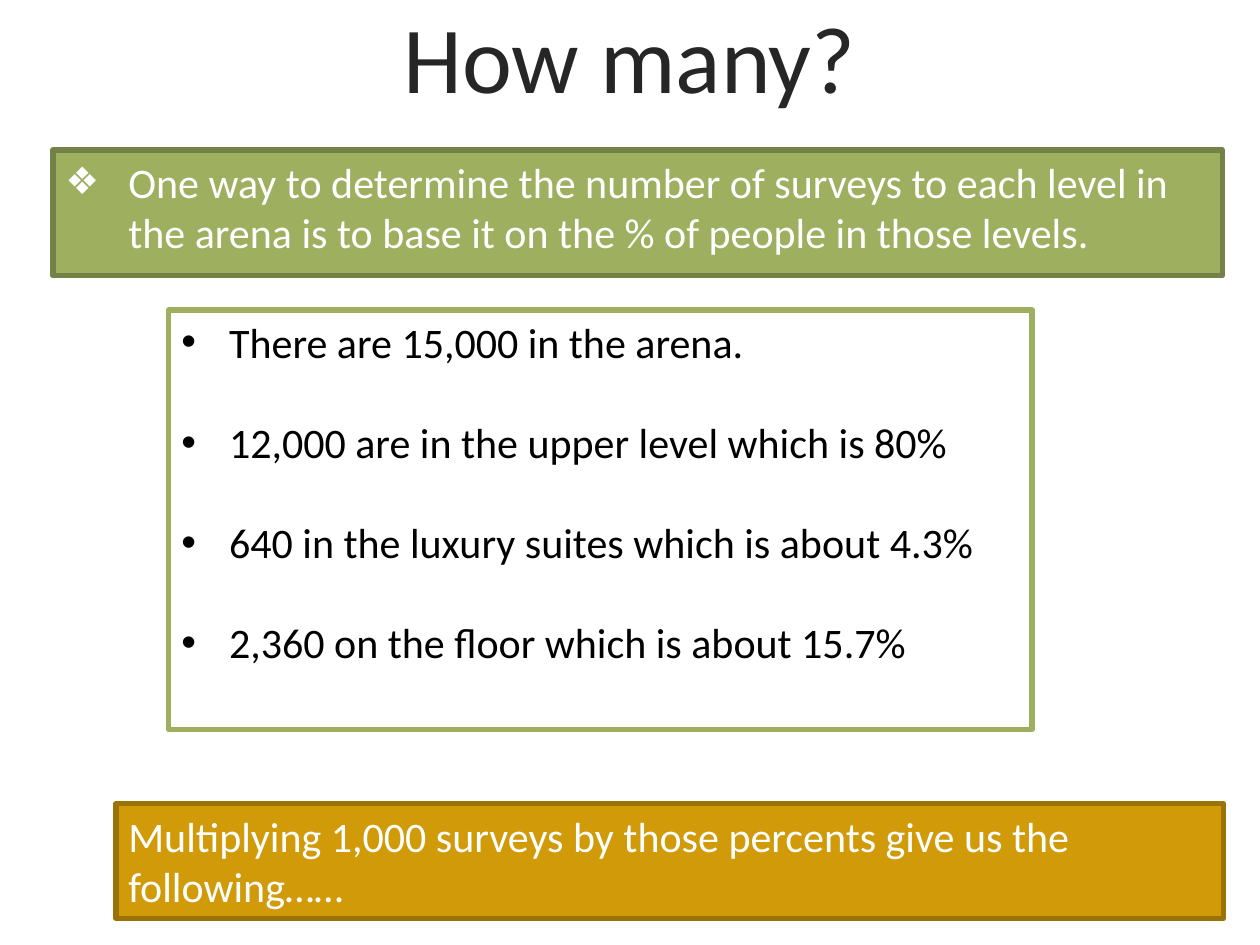
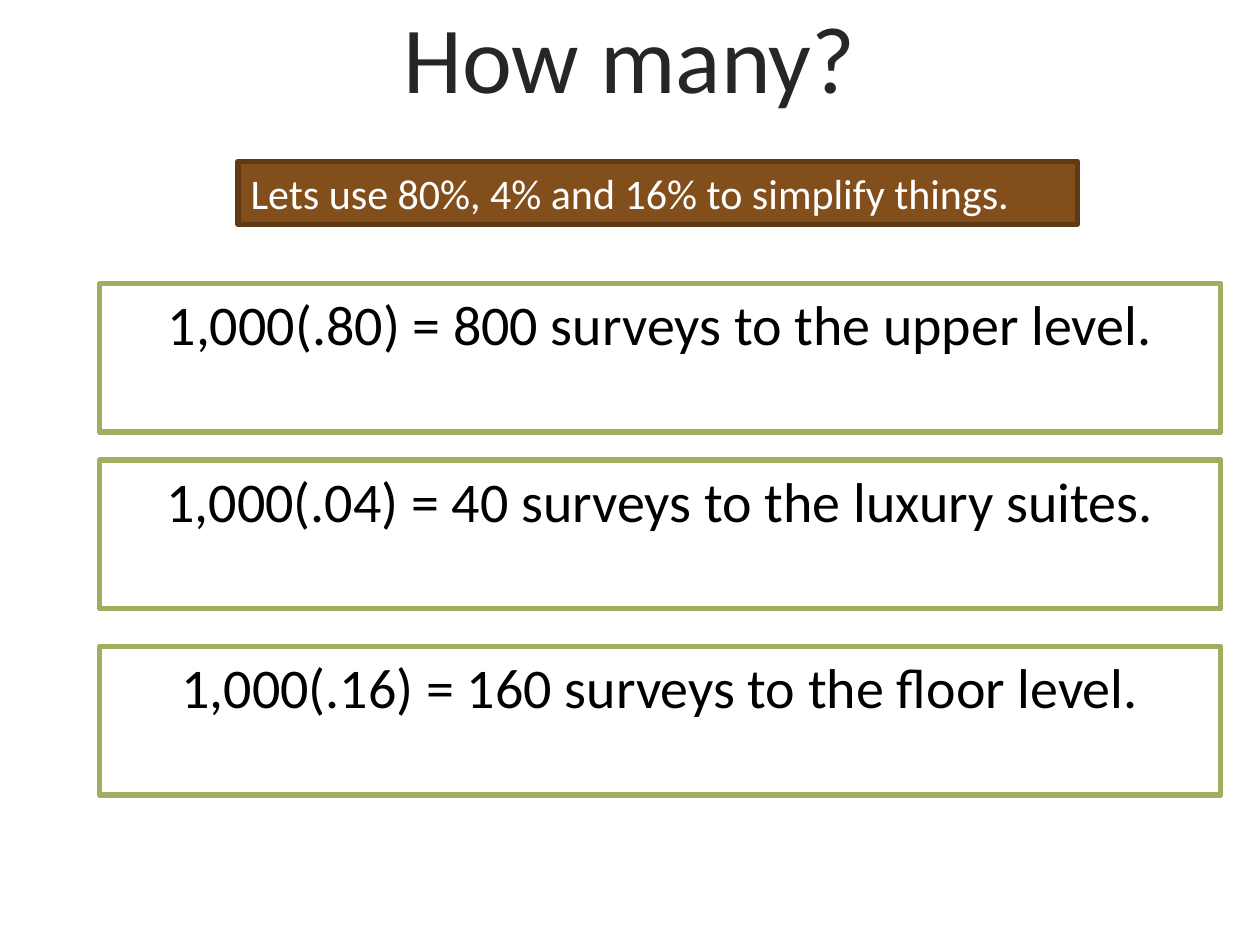
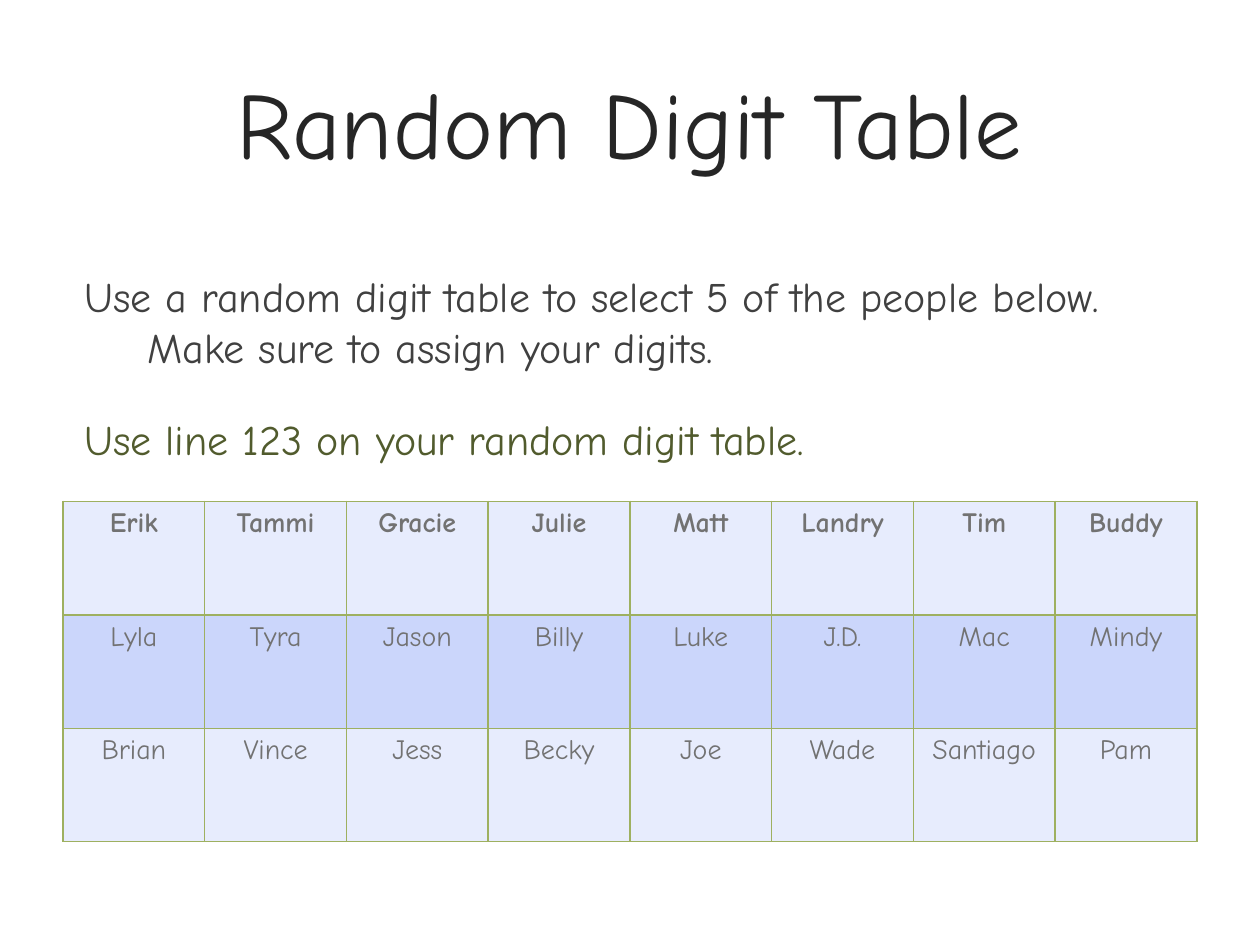
from dataclasses import dataclass

from lxml import etree
from pptx import Presentation
from pptx import util as u
from pptx.dml.color import RGBColor
from pptx.enum import shapes, text
from pptx.oxml.ns import qn

COLUMNS, ROWS = 100, 75
SLIDE_WIDTH, SLIDE_HEIGHT = u.Inches(10), u.Inches(7.5)
LEFT, CENTER = text.PP_ALIGN.LEFT, text.PP_ALIGN.CENTER


@dataclass(frozen=True)
class Theme:
    font: str = "Calibri"
    hand_font: str = "Comic Neue"
    title_size: int = 54
    formula_size: int = 32
    body_size: int = 24
    cell_size: int = 16
    title: str = "262626"
    body: str = "404040"
    hint: str = "515B2D"
    cell_text: str = "727272"
    black: str = "000000"
    white: str = "FFFFFF"
    green: str = "9EB060"
    dark_green: str = "758247"
    gold: str = "D09A08"
    dark_gold: str = "9A7206"
    brown: str = "824F1C"
    dark_brown: str = "603A15"
    light_band: str = "E7ECFD"
    dark_band: str = "CBD6FB"


THEME = Theme()


def place(column, row, width, height):
    """Turn grid columns and rows into left, top, width and height."""
    across, down = SLIDE_WIDTH / COLUMNS, SLIDE_HEIGHT / ROWS
    return [round(length) for length in
            (column * across, row * down, width * across, height * down)]


def add_bullet(paragraph, symbol, percent):
    properties = paragraph._p.get_or_add_pPr()
    etree.SubElement(properties, qn("a:buSzPct"), val=str(percent * 1000))
    etree.SubElement(properties, qn("a:buFont"), typeface="Arial")
    etree.SubElement(properties, qn("a:buChar"), char=symbol)


def write(frame, lines, *, size=THEME.body_size, color=THEME.black, font=THEME.font,
          bold=False, align=LEFT, indent=0, gap=0, bullet=None, bullet_percent=100):
    """Fill a text frame; a line is a string or a (string, colour) pair."""
    frame.word_wrap = True
    for index, line in enumerate(lines):
        words, line_color = (line, color) if isinstance(line, str) else line
        paragraph = frame.add_paragraph() if index else frame.paragraphs[0]
        paragraph.alignment = align
        if index and gap:
            paragraph.space_before = u.Pt(gap)
        if indent:
            properties = paragraph._p.get_or_add_pPr()
            properties.set("marL", str(u.Inches(indent)))
            properties.set("indent", str(-u.Inches(indent)))
        if bullet:
            add_bullet(paragraph, bullet, bullet_percent)
        run = paragraph.add_run()
        run.text = words
        run.font.size, run.font.name, run.font.bold = u.Pt(size), font, bold
        run.font.color.rgb = RGBColor.from_string(line_color)


def add_titled_slide(deck, title, row, height, font=THEME.font):
    slide = deck.slides.add_slide(deck.slide_layouts[5])
    heading = slide.shapes.title
    heading.left, heading.top, heading.width, heading.height = place(7.9, row, 84.1, height)
    heading.text_frame.auto_size = text.MSO_AUTO_SIZE.NONE
    heading.text_frame.vertical_anchor = text.MSO_ANCHOR.MIDDLE
    write(heading.text_frame, [title], size=THEME.title_size, color=THEME.title,
          font=font, align=CENTER)
    return slide


def add_panel(slide, area, lines, fill=THEME.white, edge=THEME.green, **style):
    panel = slide.shapes.add_shape(shapes.MSO_SHAPE.RECTANGLE, *place(*area))
    panel.shadow.inherit = False
    panel.fill.solid()
    panel.fill.fore_color.rgb = RGBColor.from_string(fill)
    panel.line.color.rgb = RGBColor.from_string(edge)
    panel.line.width = u.Pt(3)
    panel.text_frame.vertical_anchor = text.MSO_ANCHOR.TOP
    write(panel.text_frame, lines, **style)


def add_borders(cell, color):
    properties = cell._tc.get_or_add_tcPr()
    for position, side in enumerate(("lnL", "lnR", "lnT", "lnB")):
        border = etree.Element(qn(f"a:{side}"), w=str(u.Pt(1)))
        fill = etree.SubElement(border, qn("a:solidFill"))
        etree.SubElement(fill, qn("a:srgbClr"), val=color)
        properties.insert(position, border)


def add_name_table(slide, area, names):
    table = slide.shapes.add_table(len(names), len(names[0]), *place(*area)).table
    table.first_row = table.horz_banding = False
    for row, row_names in enumerate(names):
        for column, name in enumerate(row_names):
            cell = table.cell(row, column)
            cell.fill.solid()
            band = THEME.dark_band if row % 2 else THEME.light_band
            cell.fill.fore_color.rgb = RGBColor.from_string(band)
            add_borders(cell, THEME.green)
            write(cell.text_frame, [name], size=THEME.cell_size, color=THEME.cell_text,
                  font=THEME.hand_font, bold=row == 0, align=CENTER)


def build_percentages(deck):
    slide = add_titled_slide(deck, "How many?", 0, 8.8)
    add_panel(slide, (4.2, 11.9, 92.8, 10),
              ["One way to determine the number of surveys to each level in "
               "the arena is to base it on the % of people in those levels."],
              THEME.green, THEME.dark_green, color=THEME.white,
              indent=0.5, bullet="❖", bullet_percent=90)
    add_panel(slide, (13.4, 24.6, 68.5, 33.3),
              ["There are 15,000 in the arena.",
               "12,000 are in the upper level which is 80%",
               "640 in the luxury suites which is about 4.3%",
               "2,360 on the floor which is about 15.7%"],
              indent=0.38, bullet="•", gap=28.5)
    add_panel(slide, (9.2, 63.8, 87.9, 9.1),
              ["Multiplying 1,000 surveys by those percents give us the following……"],
              THEME.gold, THEME.dark_gold, color=THEME.white)


def build_survey_counts(deck):
    slide = add_titled_slide(deck, "How many?", 0, 8.8)
    formulas = {22.5: "1,000(.80) = 800 surveys to the upper level.",
                36.5: "1,000(.04) = 40 surveys to the luxury suites.",
                51.3: "1,000(.16) = 160 surveys to the floor level."}
    for row, formula in formulas.items():
        add_panel(slide, (7.9, row, 89, 11.8), [formula],
                  size=THEME.formula_size, align=CENTER)
    add_panel(slide, (18.9, 12.8, 66.6, 5),
              ["Lets use 80%, 4% and 16% to simplify things."],
              THEME.brown, THEME.dark_brown, color=THEME.white)


def build_random_digits(deck):
    slide = add_titled_slide(deck, "Random Digit Table", 3.4, 12.5, THEME.hand_font)
    task = slide.shapes.add_textbox(*place(5.7, 21, 88.5, 18))
    write(task.text_frame,
          ["Use a random digit table to select 5 of the people below. "
           "Make sure to assign your digits.",
           ("Use line 123 on your random digit table.", THEME.hint)],
          color=THEME.body, font=THEME.hand_font, indent=0.5, gap=24)
    add_name_table(slide, (5, 39.8, 90, 27), [
        ["Erik", "Tammi", "Gracie", "Julie", "Matt", "Landry", "Tim", "Buddy"],
        ["Lyla", "Tyra", "Jason", "Billy", "Luke", "J.D.", "Mac", "Mindy"],
        ["Brian", "Vince", "Jess", "Becky", "Joe", "Wade", "Santiago", "Pam"],
    ])


def main():
    deck = Presentation()
    deck.slide_width, deck.slide_height = SLIDE_WIDTH, SLIDE_HEIGHT
    build_percentages(deck)
    build_survey_counts(deck)
    build_random_digits(deck)
    deck.save("out.pptx")


if __name__ == "__main__":
    main()
